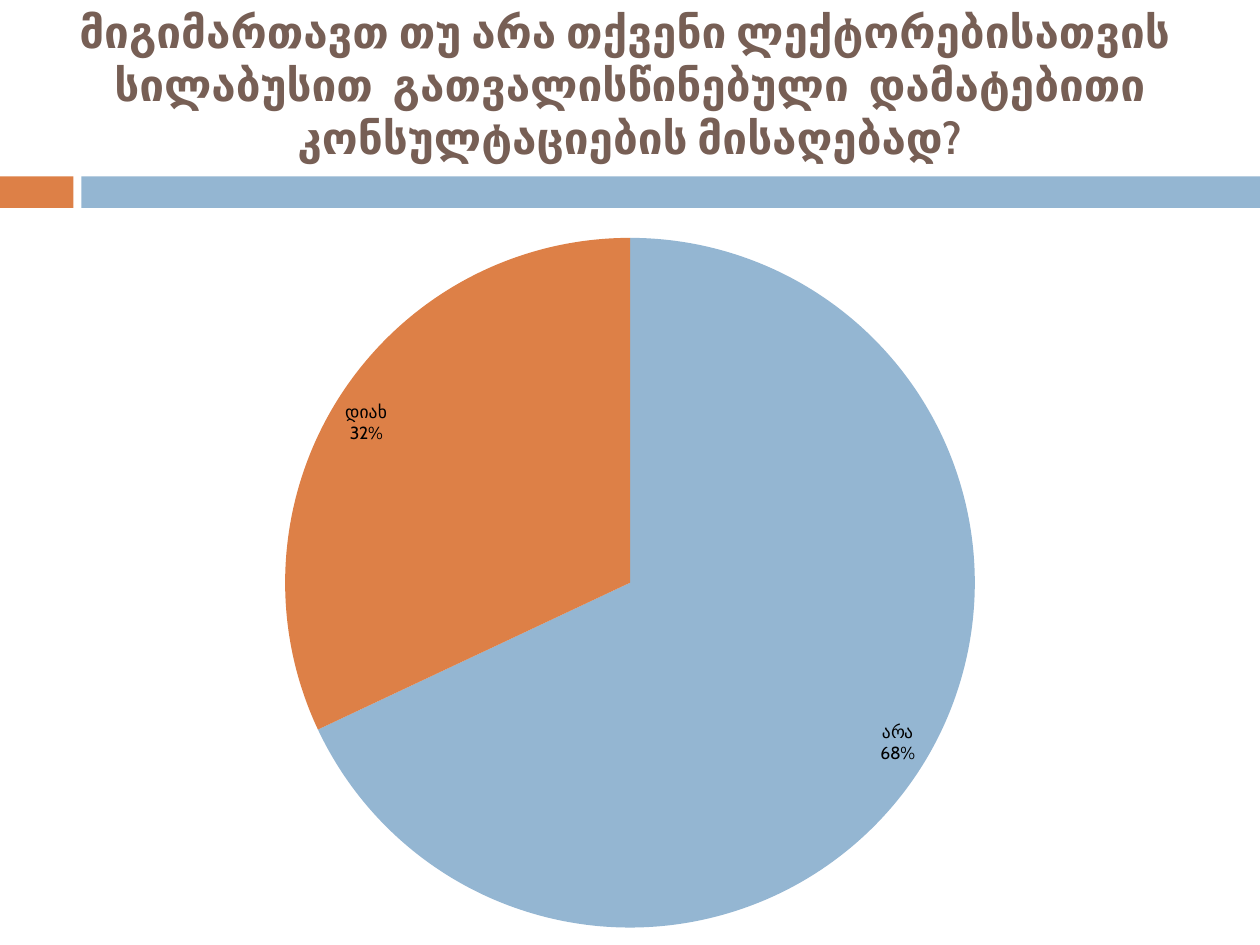
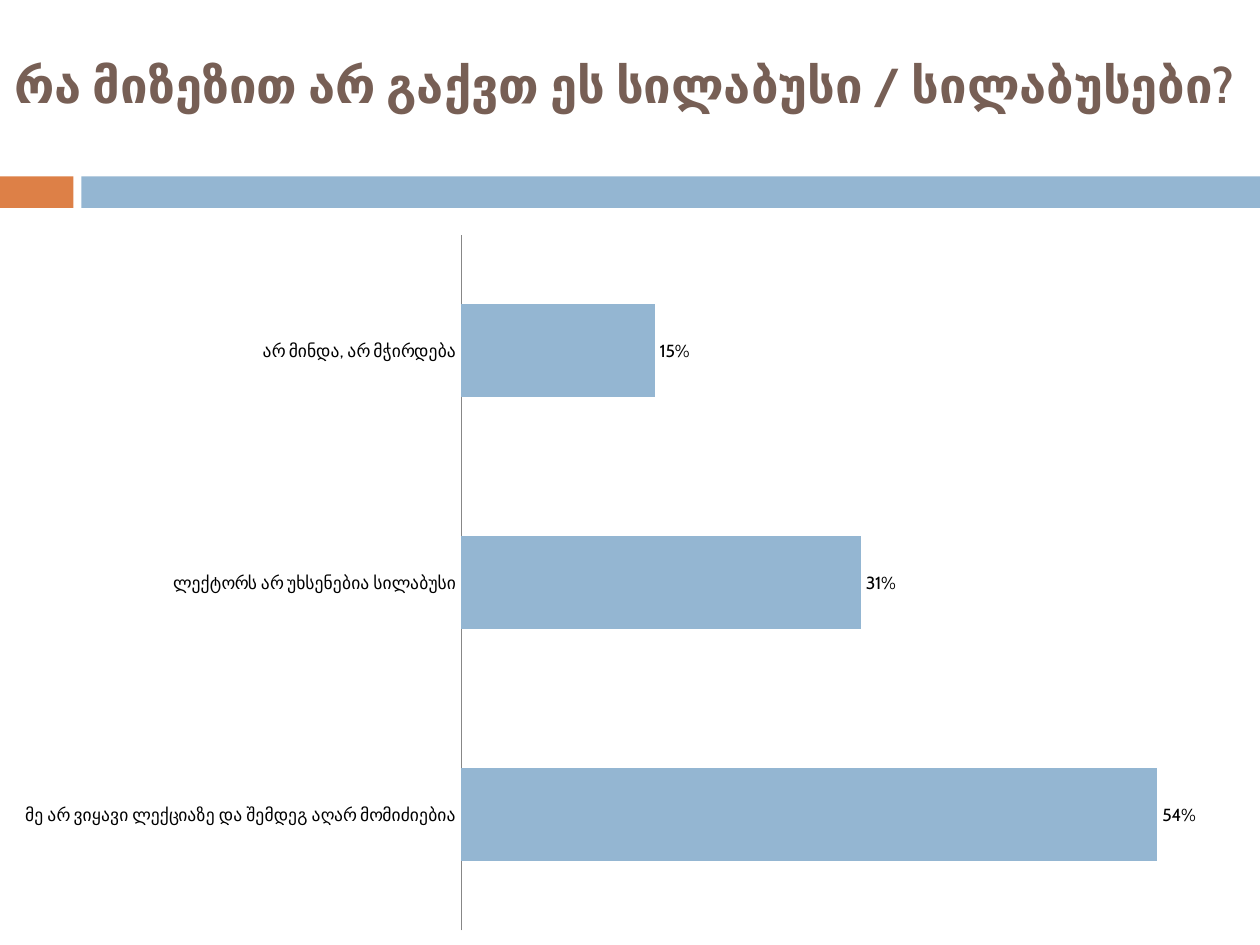
from lxml import etree
from pptx import Presentation
from pptx import util as u
from pptx.chart import data as cd
from pptx.dml.color import RGBColor
from pptx.enum import chart as ce, shapes, text

BLUE, ORANGE, BROWN, GRAY = "94B6D2", "DD8047", "775F55", "878787"
FONT = "Cabin"


def rgb(code):
    return RGBColor.from_string(code)


def apply(obj, **vals):
    for key, val in vals.items():
        setattr(obj, key, val)


def paint(part, code):
    part.fill.solid()
    part.fill.fore_color.rgb = rgb(code)


class Deck:
    wide, high = 720, 540
    band_top, band_high = 100.8, 18
    chart_top = 126

    def __init__(self):
        self.prs = Presentation()
        apply(self.prs, slide_width=u.Pt(self.wide), slide_height=u.Pt(self.high))

    def page(self, words, size):
        self.slide = self.prs.slides.add_slide(self.prs.slide_layouts[5])
        self.band(0, 42, ORANGE)
        self.band(46.5, self.wide - 46.5, BLUE)
        self.title(words, size)

    def band(self, left, width, code):
        box = self.slide.shapes.add_shape(
            shapes.MSO_SHAPE.RECTANGLE, u.Pt(left), u.Pt(self.band_top),
            u.Pt(width), u.Pt(self.band_high))
        box.shadow.inherit = False
        box.line.fill.background()
        paint(box, code)

    def title(self, words, size):
        head = self.slide.shapes.title
        apply(head, left=0, top=0, width=u.Pt(self.wide), height=u.Pt(96))
        frame = head.text_frame
        apply(frame, text=words, word_wrap=True, auto_size=text.MSO_AUTO_SIZE.NONE,
              vertical_anchor=text.MSO_ANCHOR.MIDDLE)
        para = frame.paragraphs[0]
        para.alignment = text.PP_ALIGN.CENTER
        font = para.runs[0].font
        apply(font, name=FONT, size=u.Pt(size), bold=True)
        font.color.rgb = rgb(BROWN)

    def chart(self, kind, rows, style):
        data = cd.CategoryChartData(number_format="0%")
        data.categories = [name for name, _ in rows]
        data.add_series("Series 1", [val for _, val in rows])
        chart = self.slide.shapes.add_chart(
            kind, 0, u.Pt(self.chart_top), u.Pt(self.wide),
            u.Pt(self.high - self.chart_top), data).chart
        apply(chart, has_legend=False, has_title=False)
        apply(chart.font, name=FONT, size=u.Pt(10))
        chart.font.color.rgb = rgb("000000")
        plot = chart.plots[0]
        plot.has_data_labels = True
        apply(plot.data_labels, number_format="0%", number_format_is_linked=False, **style)
        return chart, plot

    def pie(self, rows, codes):
        _, plot = self.chart(ce.XL_CHART_TYPE.PIE, rows, dict(
            show_value=False, show_percentage=True, show_category_name=True,
            position=ce.XL_LABEL_POSITION.INSIDE_END))
        plot.vary_by_categories = True
        for i, code in enumerate(codes):
            paint(plot.series[0].points[i].format, code)
        flag = plot.data_labels._element.find("{*}showBubbleSize")
        gap = etree.Element(etree.QName(flag, "separator"))
        gap.text = "\n"
        flag.addnext(gap)

    def bars(self, rows, code):
        chart, plot = self.chart(ce.XL_CHART_TYPE.BAR_CLUSTERED, rows, dict(
            show_value=True, position=ce.XL_LABEL_POSITION.OUTSIDE_END))
        apply(plot, vary_by_categories=False, gap_width=150, overlap=-25)
        paint(plot.series[0].format, code)
        apply(chart.value_axis, visible=False, has_major_gridlines=False, minimum_scale=0)
        axis = chart.category_axis
        apply(axis, major_tick_mark=ce.XL_TICK_MARK.NONE, minor_tick_mark=ce.XL_TICK_MARK.NONE)
        axis.format.line.color.rgb = rgb(GRAY)
        axis.format.line.width = u.Pt(0.75)


def main():
    deck = Deck()
    deck.page("მიგიმართავთ თუ არა თქვენი ლექტორებისათვის  სილაბუსით  "
              "გათვალისწინებული  დამატებითი კონსულტაციების მისაღებად?", 25.2)
    deck.pie([("არა", 68), ("დიახ", 32)], [BLUE, ORANGE])
    deck.page("რა მიზეზით არ გაქვთ ეს სილაბუსი / სილაბუსები? ", 28)
    deck.bars([("მე არ ვიყავი ლექციაზე და შემდეგ აღარ მომიძიებია", 0.54),
               ("ლექტორს არ უხსენებია სილაბუსი", 0.31),
               ("არ მინდა, არ მჭირდება", 0.15)], BLUE)
    deck.prs.save("out.pptx")


if __name__ == "__main__":
    main()
